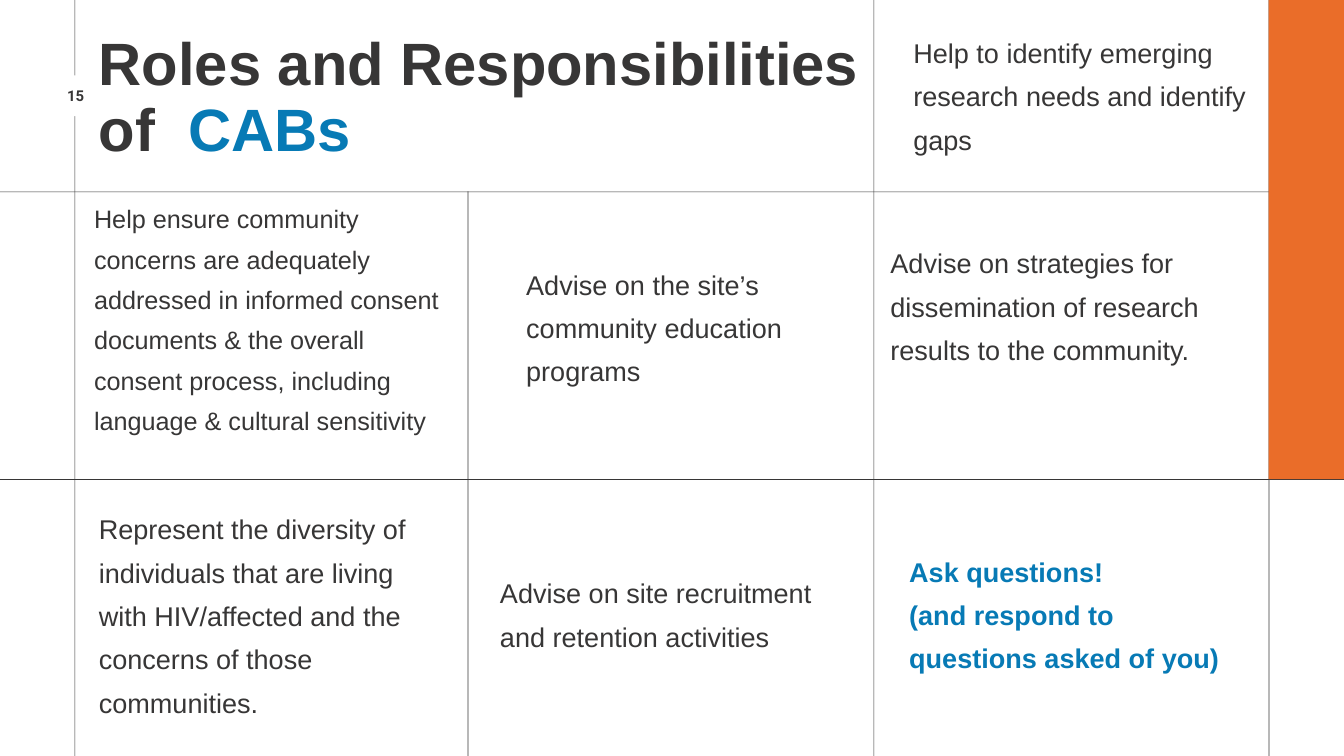
from dataclasses import dataclass

from pptx import Presentation
from pptx.dml.color import RGBColor
from pptx.enum.shapes import MSO_SHAPE
from pptx.enum.text import MSO_ANCHOR, PP_ALIGN
from pptx.util import Emu, Pt

PX = 9144  # 100 px to the inch
WIDTH, HEIGHT = 2000, 1125


@dataclass(frozen=True)
class Theme:
    ink: str = "373636"
    blue: str = "077AB5"
    orange: str = "EA6D29"
    paper: str = "FFFFFF"
    font: str = "Arial"
    number_font: str = "Roboto"
    title: int = 64
    body: int = 29
    small: int = 27
    number: int = 16


class Deck:
    """Theme and the slide being filled."""

    def __init__(self, theme):
        self.theme = theme
        self.prs = Presentation()
        self.prs.slide_width = Emu(WIDTH * PX)
        self.prs.slide_height = Emu(HEIGHT * PX)
        self.s = self.prs.slides.add_slide(self.prs.slide_layouts[6])

    def rect(self, x, y, w, h, color):
        sp = self.s.shapes.add_shape(
            MSO_SHAPE.RECTANGLE, *(Emu(v * PX) for v in (x, y, w, h)))
        sp.shadow.inherit = False
        sp.fill.solid()
        sp.fill.fore_color.rgb = RGBColor.from_string(color)
        sp.line.fill.background()

    def vertical_rule(self, x, y=0):
        self.rect(x, y, 1, HEIGHT - y, self.theme.ink)

    def horizontal_rule(self, y):
        self.rect(0, y, WIDTH, 1, self.theme.ink)

    def text(self, box, paragraphs, size, leading=1.6, bold=False,
             font=None, align=PP_ALIGN.LEFT):
        """Each paragraph is a list of (text, color) runs."""
        sp = self.s.shapes.add_textbox(*(Emu(v * PX) for v in box))
        tf = sp.text_frame
        tf.word_wrap = True
        tf.vertical_anchor = MSO_ANCHOR.TOP
        tf.margin_left = tf.margin_top = tf.margin_right = tf.margin_bottom = 0
        for i, runs in enumerate(paragraphs):
            p = tf.add_paragraph() if i else tf.paragraphs[0]
            p.alignment = align
            p.line_spacing = Pt(round(size * leading, 1))
            for words, color in runs:
                r = p.add_run()
                r.text = words
                r.font.name = font or self.theme.font
                r.font.size = Pt(size)
                r.font.bold = bold
                r.font.color.rgb = RGBColor.from_string(color)

    def role(self, box, words, size=None):
        self.text(box, [[(words, self.theme.ink)]], size or self.theme.body)


def main():
    theme = Theme()
    deck = Deck(theme)

    deck.vertical_rule(111)
    deck.rect(69, 112, 86, 61, theme.paper)
    deck.text((76, 131, 73, 25), [[("15", theme.ink)]], theme.number,
              leading=1.1, bold=True, font=theme.number_font,
              align=PP_ALIGN.CENTER)
    for y in (285, 713):
        deck.horizontal_rule(y)
    for x, y in ((1888, 0), (696, 285), (1300, 0)):
        deck.vertical_rule(x, y)
    deck.rect(1888, 0, WIDTH - 1888, 713, theme.orange)

    deck.text((147, 48, 1141, 196),
              [[("Roles and Responsibilities of  ", theme.ink),
                ("CABs", theme.blue)]],
              theme.title, leading=1.1, bold=True)
    deck.role((140, 288, 530, 412),
              "Help ensure community concerns are adequately addressed in "
              "informed consent documents & the overall consent process, "
              "including language & cultural sensitivity", theme.small)
    for box, words in (
        ((1359, 38, 505, 188),
         "Help to identify emerging research needs and identify gaps"),
        ((147, 747, 514, 315),
         "Represent the diversity of individuals that are living with "
         "HIV/affected and the concerns of those communities."),
        ((744, 842, 512, 125),
         "Advise on site recruitment and retention activities"),
        ((783, 383, 432, 188),
         "Advise on the site’s community education programs"),
        ((1325, 351, 539, 252),
         "Advise on strategies for dissemination of research results to "
         "the community."),
    ):
        deck.role(box, words)
    deck.text((1353, 810, 483, 188),
              [[("Ask questions!", theme.blue)],
               [("(and respond to questions asked of you)", theme.blue)]],
              theme.body, bold=True)

    deck.prs.save("out.pptx")


if __name__ == "__main__":
    main()
